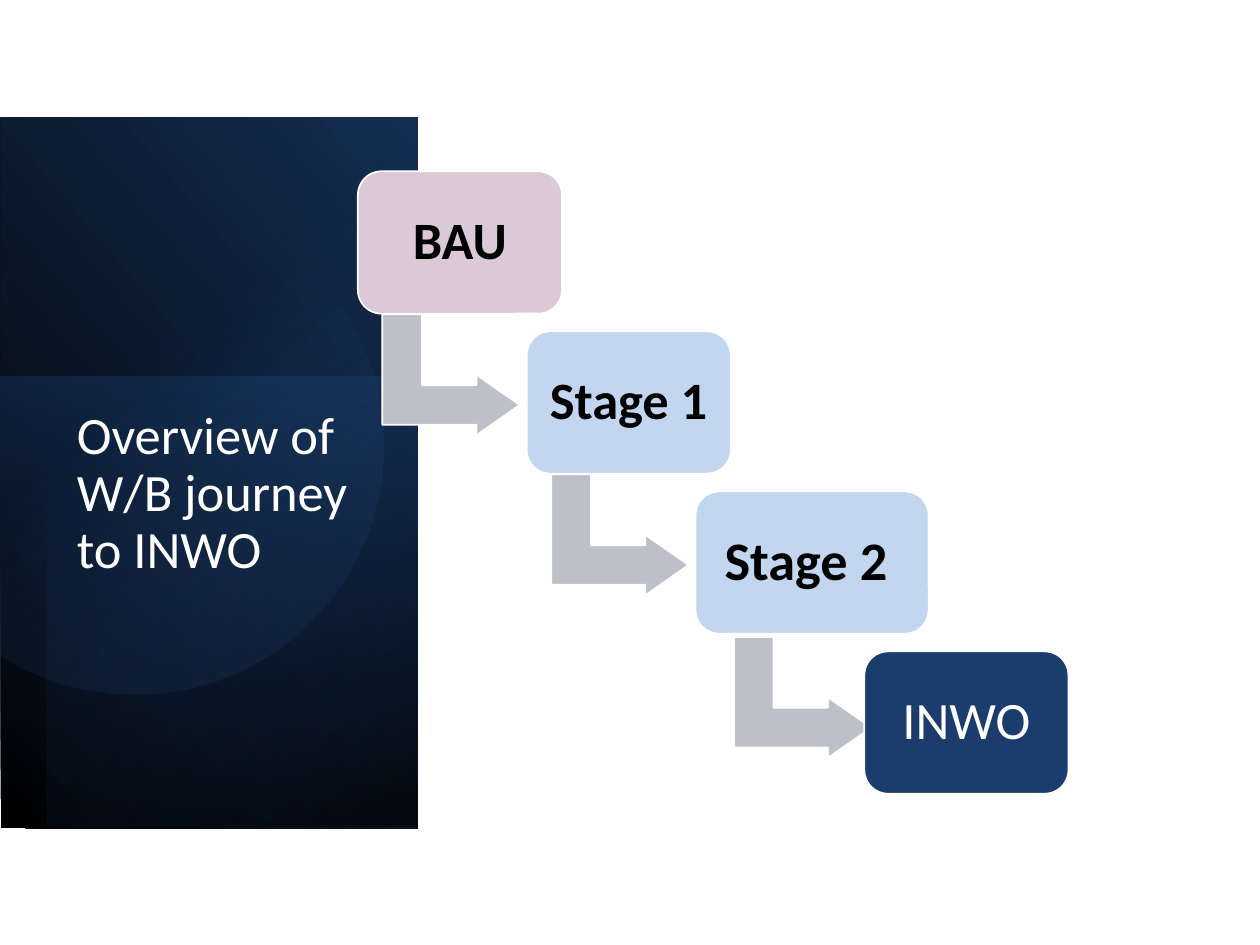
import math

import pptx
import pptx.dml.color
import pptx.enum.shapes
import pptx.enum.text
import pptx.oxml
import pptx.oxml.ns
import pptx.util

Inches, Pt = pptx.util.Inches, pptx.util.Pt
SHAPES = pptx.enum.shapes.MSO_SHAPE
ALIGN = pptx.enum.text.PP_ALIGN
ANCHOR = pptx.enum.text.MSO_ANCHOR

TITLE = "Overview of W/B journey to INWO"

# text, width, size, bold, fill, text colour
STAGES = [
    ("BAU", 1.62, 30, True, "DBC9D7", "000000"),
    ("Stage 1", 1.62, 30, True, "C3D6F0", "000000"),
    ("Stage 2 ", 1.85, 31, True, "C3D6F0", "000000"),
    ("INWO", 1.62, 30, False, "1B3D6D", "FFFFFF"),
]
ARROW_OFFSETS = [(0.26, 1.07), (0.26, 1.07), (0.37, 1.09)]

# box, rotation, mirrored, gradient angle, stops (position, colour, opacity)
PANELS = [
    ((-1.16, 2.1, 5.64, 3.31), 90, True, 310, [(0, "000000", 100), (100, "142E52", 100)]),
    ((-0.13, 3.12, 3.57, 3.31), 270, False, 190, [(0, "1B3D6D", 50), (100, "0D1E37", 0)]),
    ((-0.97, 2.28, 5.62, 2.94), 270, True, 220, [(0, "000000", 59), (69, "1B3D6D", 0)]),
]
CIRCLE_X, CIRCLE_Y, RADIUS = 1.07, 3.54, 1.97
CIRCLE_STOPS = [(39, "4B83D2", 0), (100, "142E52", 26)]

FIRST_LEFT, FIRST_TOP = 2.84, 1.36
STEP_X, STEP_Y = 1.34, 1.27
STAGE_HEIGHT = 1.13


def color(value):
    return pptx.dml.color.RGBColor.from_string(value)


def gradient(shape, angle, stops):
    """Give a borderless shape a linear gradient with opacity."""
    shape.shadow.inherit = False
    shape.line.fill.background()
    shape.fill.background()
    marks = "".join(
        f'<a:gs pos="{position * 1000}"><a:srgbClr val="{value}">'
        f'<a:alpha val="{opacity * 1000}"/></a:srgbClr></a:gs>'
        for position, value, opacity in stops
    )
    fill = pptx.oxml.parse_xml(
        f'<a:gradFill {pptx.oxml.ns.nsdecls("a")} rotWithShape="1"><a:gsLst>{marks}</a:gsLst>'
        f'<a:lin ang="{round(angle * 60000)}" scaled="0"/></a:gradFill>'
    )
    properties = shape.element.spPr
    properties.replace(properties.find(pptx.oxml.ns.qn("a:noFill")), fill)


def add_solid(kind, box, fill):
    shape = slide.shapes.add_shape(kind, *map(Inches, box))
    shape.shadow.inherit = False
    shape.fill.solid()
    shape.fill.fore_color.rgb = color(fill)
    shape.line.color.rgb = color("FFFFFF")
    shape.line.width = Pt(1)
    return shape


def write(frame, text, size, bold, value, align, anchor):
    frame.word_wrap = True
    frame.vertical_anchor = anchor
    frame.text = text
    paragraph = frame.paragraphs[0]
    paragraph.alignment = align
    paragraph.line_spacing = 0.9
    font = paragraph.runs[0].font
    font.name, font.size, font.bold = "Calibri", Pt(size), bold
    font.color.rgb = color(value)


deck = pptx.Presentation()
deck.slide_width, deck.slide_height = Inches(10), Inches(7.5)
slide = deck.slides.add_slide(deck.slide_layouts[6])

# Layered dark panel
for box, rotation, mirrored, angle, stops in PANELS:
    panel = slide.shapes.add_shape(SHAPES.RECTANGLE, *map(Inches, box))
    panel.rotation = rotation
    if mirrored:
        panel.element.spPr.xfrm.set("flipH", "1")
    gradient(panel, angle, stops)

# Glowing circle, cut off at the left slide edge
cut = math.degrees(math.acos(-CIRCLE_X / RADIUS))
arc = []
for step in range(121):
    turn = math.radians(-cut + 2 * cut * step / 120)
    arc.append((Inches(CIRCLE_X + RADIUS * math.cos(turn)),
                Inches(CIRCLE_Y + RADIUS * math.sin(turn))))
outline = slide.shapes.build_freeform(*arc[0])
outline.add_line_segments(arc[1:], close=True)
gradient(outline.convert_to_shape(), 51.6, CIRCLE_STOPS)

# Title
title = slide.shapes.add_textbox(*map(Inches, (0.54, 3.21, 2.36, 2.52))).text_frame
title.margin_left = title.margin_right = Inches(0.07)
title.margin_top = title.margin_bottom = Inches(0.04)
write(title, TITLE, 30, False, "FFFFFF", ALIGN.LEFT, ANCHOR.TOP)

# Staircase of stages, each with an arrow to the next
for index, (text, width, size, bold, fill, text_color) in enumerate(STAGES):
    left, top = FIRST_LEFT + index * STEP_X, FIRST_TOP + index * STEP_Y
    if index < len(ARROW_OFFSETS):
        dx, dy = ARROW_OFFSETS[index]
        arrow = add_solid(SHAPES.BENT_UP_ARROW, (left + dx, top + dy, 0.96, 1.09), "BDC0C8")
        arrow.rotation = 90
        for place, value in enumerate((0.328, 0.25, 0.358)):
            arrow.adjustments[place] = value
    stage = add_solid(SHAPES.ROUNDED_RECTANGLE, (left, top, width, STAGE_HEIGHT), fill)
    write(stage.text_frame, text, size, bold, text_color, ALIGN.CENTER, ANCHOR.MIDDLE)

deck.save("out.pptx")
